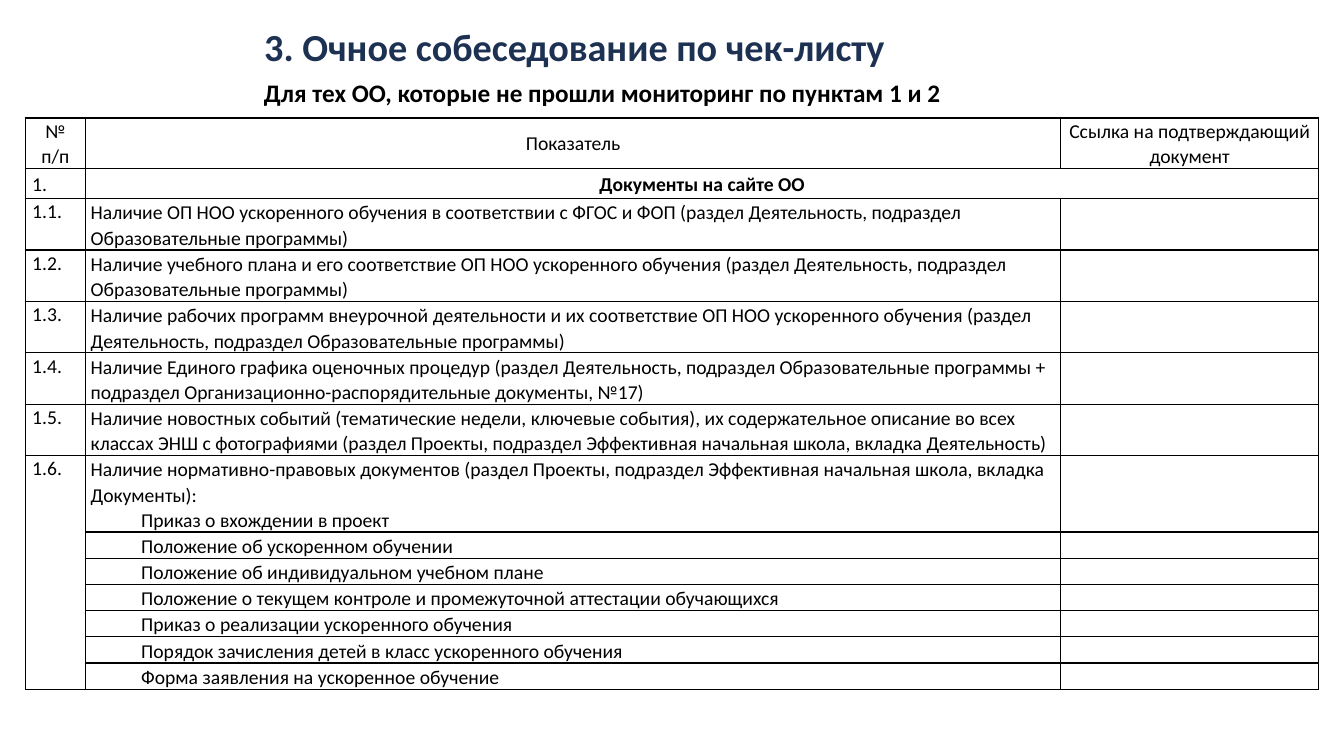
from lxml.etree import SubElement
from pptx import Presentation
from pptx.dml.color import RGBColor
from pptx.enum.text import MSO_ANCHOR, PP_ALIGN
from pptx.oxml import parse_xml
from pptx.oxml.ns import nsdecls, qn
from pptx.util import Inches, Pt

NAVY = RGBColor(0x1D, 0x31, 0x52)
BLACK = RGBColor(0, 0, 0)
FONT = "Calibri"

HEADERS = ["№ п/п", "Показатель", "Ссылка на подтверждающий документ"]
SECTION = "Документы на сайте ОО"
INDICATORS = [
    "Наличие ОП НОО ускоренного обучения в соответствии с ФГОС и ФОП (раздел Деятельность, подраздел Образовательные программы)",
    "Наличие учебного плана и его соответствие ОП НОО ускоренного обучения (раздел Деятельность, подраздел Образовательные программы)",
    "Наличие рабочих программ внеурочной деятельности и их соответствие ОП НОО ускоренного обучения (раздел Деятельность, подраздел Образовательные программы)",
    "Наличие Единого графика оценочных процедур (раздел Деятельность, подраздел Образовательные программы + подраздел Организационно-распорядительные документы, №17)",
    "Наличие новостных событий (тематические недели, ключевые события), их содержательное описание во всех классах ЭНШ с фотографиями (раздел Проекты, подраздел Эффективная начальная школа, вкладка Деятельность)",
    "Наличие нормативно-правовых документов (раздел Проекты, подраздел Эффективная начальная школа, вкладка Документы):",
]
DOCUMENTS = [
    "Приказ о вхождении в проект",
    "Положение об ускоренном обучении",
    "Положение об индивидуальном учебном плане",
    "Положение о текущем контроле и промежуточной аттестации обучающихся",
    "Приказ о реализации ускоренного обучения",
    "Порядок зачисления детей в класс ускоренного обучения",
    "Форма заявления на ускоренное обучение",
]
COL_WIDTHS = [0.6, 9.67, 2.56]
ROW_HEIGHTS = [0.5, 0.3] + [0.51] * 5 + [0.75] + [0.25] * 6
NO_STYLE = "{2D5ABB26-0587-4C30-8999-92F81FD0307C}"


def add_run(p, text, size=14, color=BLACK, bold=False):
    r = p.add_run()
    r.text = text
    r.font.name = FONT
    r.font.size = Pt(size)
    r.font.bold = bold
    r.font.color.rgb = color


def write(p, text, align=PP_ALIGN.LEFT, bold=False, indent=0):
    p.alignment = align
    p.line_spacing = 1.07
    if indent:
        p._p.get_or_add_pPr().set("marL", str(Inches(indent)))
        p._p.get_or_add_pPr().set("indent", "0")
    add_run(p, text, bold=bold)


prs = Presentation()
prs.slide_width, prs.slide_height = Inches(13.33), Inches(7.5)
s = prs.slides.add_slide(prs.slide_layouts[5])

# Title
title = s.shapes.title
title.left, title.top = Inches(2.52), Inches(0.16)
title.width, title.height = Inches(9.02), Inches(0.66)
tf = title.text_frame
tf.vertical_anchor = MSO_ANCHOR.MIDDLE
p = tf.paragraphs[0]
p.alignment = PP_ALIGN.LEFT
p.line_spacing = 0.9
add_run(p, "3. Очное собеседование по чек-листу", 27.3, NAVY, True)

# Subtitle
sp = s.shapes.add_textbox(Inches(2.52), Inches(0.72), Inches(7), Inches(0.4))
sp.text_frame.word_wrap = False
add_run(sp.text_frame.paragraphs[0],
        "Для тех ОО, которые не прошли мониторинг по пунктам 1 и 2", 18, bold=True)

# Checklist table
frame = s.shapes.add_table(len(ROW_HEIGHTS), len(COL_WIDTHS), Inches(0.25), Inches(1.17),
                           Inches(sum(COL_WIDTHS)), Inches(sum(ROW_HEIGHTS)))
table = frame.table
table.first_row = table.horz_banding = False
table._tbl.tblPr.find(qn("a:tableStyleId")).text = NO_STYLE
for col, width in zip(table.columns, COL_WIDTHS):
    col.width = Inches(width)
for row, height in zip(table.rows, ROW_HEIGHTS):
    row.height = Inches(height)

# Cell margins, fill and borders
for i, row in enumerate(table.rows):
    for j, cell in enumerate(row.cells):
        indicator = i > 1 and j == 1
        cell.margin_left = cell.margin_right = Inches(0.05 if indicator else 0.07)
        cell.margin_top = Inches(0.01 if indicator else 0)
        cell.margin_bottom = 0
        cell.vertical_anchor = MSO_ANCHOR.MIDDLE if i < 2 else MSO_ANCHOR.TOP
        cell.fill.background()
        tcPr = cell._tc.get_or_add_tcPr()
        for k, side in enumerate(("lnL", "lnR", "lnT", "lnB")):
            tcPr.insert(k, parse_xml(
                f'<a:{side} {nsdecls("a")} w="{Pt(1)}"><a:solidFill>'
                f'<a:srgbClr val="{BLACK}"/></a:solidFill></a:{side}>'))

# Header and section rows
for j, text in enumerate(HEADERS):
    write(table.cell(0, j).text_frame.paragraphs[0], text, PP_ALIGN.CENTER)
write(table.cell(1, 0).text_frame.paragraphs[0], "1.")
table.cell(1, 1).merge(table.cell(1, 2))
write(table.cell(1, 1).text_frame.paragraphs[0], SECTION, PP_ALIGN.CENTER, bold=True)

# Numbered indicators
for n, text in enumerate(INDICATORS, 1):
    write(table.cell(n + 1, 0).text_frame.paragraphs[0], f"1.{n}.")
    write(table.cell(n + 1, 1).text_frame.paragraphs[0], text)

# Documents of the last indicator, the first one in the indicator's own cell
first = len(INDICATORS) + 1
table.cell(first, 0).merge(table.cell(len(ROW_HEIGHTS) - 1, 0))
for n, text in enumerate(DOCUMENTS):
    tf = table.cell(first + n, 1).text_frame
    write(tf.add_paragraph() if n == 0 else tf.paragraphs[0], text, indent=0.5)

# Empty cells keep the text size so that rows stay low
for row in table.rows:
    for cell in row.cells:
        if not cell.text_frame.text:
            SubElement(cell.text_frame.paragraphs[0]._p, qn("a:endParaRPr"), sz="1400")

prs.save("out.pptx")
